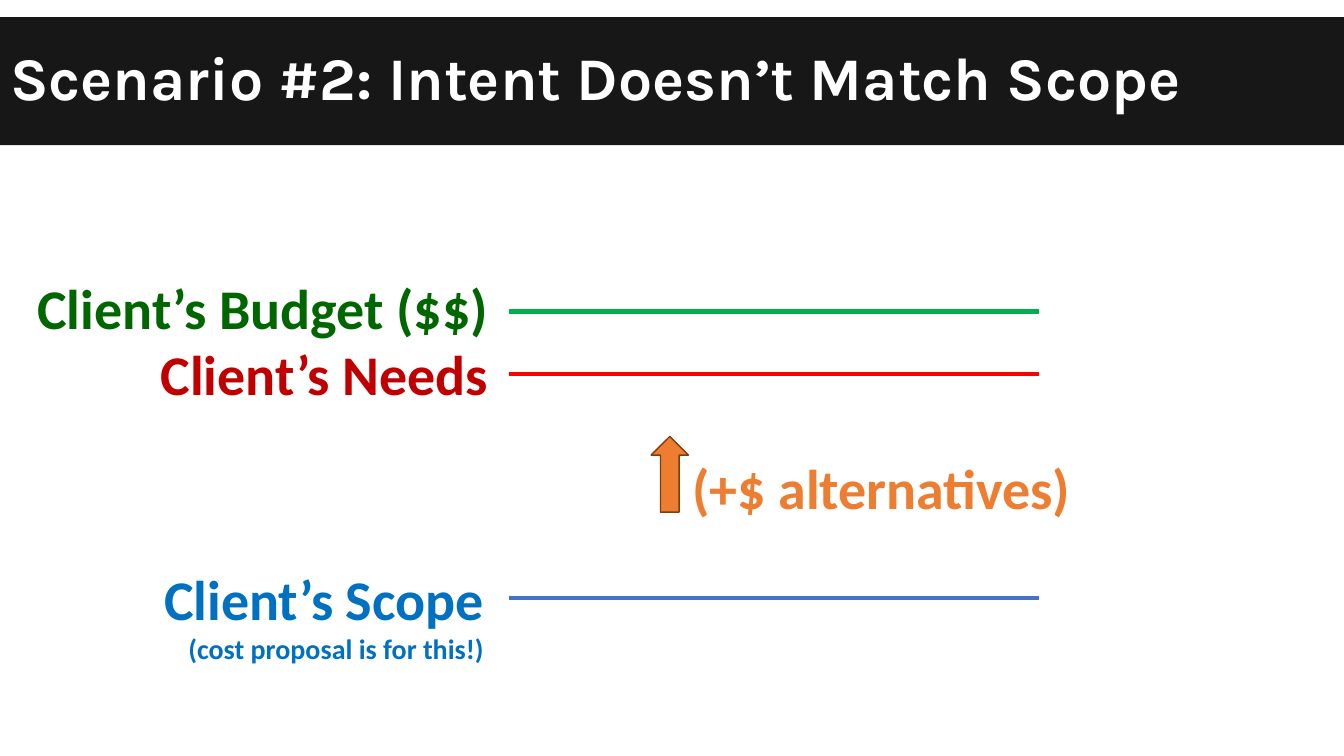
from dataclasses import dataclass

from lxml import etree
from pptx import Presentation
from pptx import util as u
from pptx.dml.color import RGBColor
from pptx.enum import shapes, text
from pptx.oxml import ns
from pptx.shapes.autoshape import Shape

BLACK = RGBColor(0x18, 0x17, 0x17)
WHITE = RGBColor(0xFF, 0xFF, 0xFF)
DARK_GREEN = RGBColor(0x00, 0x66, 0x00)
GREEN = RGBColor(0x00, 0xB0, 0x50)
DARK_RED = RGBColor(0xC0, 0x00, 0x00)
RED = RGBColor(0xFF, 0x00, 0x00)
SKY = RGBColor(0x00, 0x70, 0xC0)
BLUE = RGBColor(0x44, 0x72, 0xC4)
ORANGE = RGBColor(0xED, 0x7D, 0x31)
BROWN = RGBColor(0x84, 0x3C, 0x0B)

WIDTH, HEIGHT = u.Inches(13.33), u.Inches(7.5)
COLUMNS, ROWS = 80, 45
LINE_START, LINE_END = 30.3, 61.86


@dataclass(frozen=True)
class Box:
    col: float
    row: float
    cols: float
    rows: float

    def lengths(self) -> tuple[int, int, int, int]:
        return x(self.col), y(self.row), x(self.cols), y(self.rows)


@dataclass(frozen=True)
class Line:
    text: str
    size: int = 40


@dataclass(frozen=True)
class Level:
    lines: tuple[Line, ...]
    box: Box
    text_color: RGBColor
    line_row: float
    line_color: RGBColor


LEVELS = (
    Level((Line("Client’s Budget ($$)"),), Box(1.32, 15.96, 28.32, 4.62),
          DARK_GREEN, 18.54, GREEN),
    Level((Line("Client’s Needs"),), Box(8.7, 19.92, 20.94, 4.62),
          DARK_RED, 22.26, RED),
    Level((Line("Client’s Scope"), Line("(cost proposal is for this!)", 20)),
          Box(8.94, 33.3, 20.46, 6.66), SKY, 35.58, BLUE),
)


def x(cols: float) -> int:
    return round(WIDTH * cols / COLUMNS)


def y(rows: float) -> int:
    return round(HEIGHT * rows / ROWS)


def style(p, name: str, size: float, color: RGBColor, align) -> None:
    p.alignment = align
    p.font.name = name
    p.font.size = u.Pt(size)
    p.font.bold = True
    p.font.color.rgb = color


def add_label(parent, lines: tuple[Line, ...], box: Box, color: RGBColor,
              align=text.PP_ALIGN.RIGHT) -> Shape:
    sp = parent.add_textbox(*box.lengths())
    tf = sp.text_frame
    tf.word_wrap = False
    tf.auto_size = text.MSO_AUTO_SIZE.SHAPE_TO_FIT_TEXT
    for i, line in enumerate(lines):
        p = tf.add_paragraph() if i else tf.paragraphs[0]
        p.text = line.text
        style(p, "Calibri", line.size, color, align)
    return sp


def add_level(parent, level: Level) -> None:
    add_label(parent, level.lines, level.box, level.text_color)
    row = y(level.line_row)
    line = parent.add_connector(shapes.MSO_CONNECTOR.STRAIGHT,
                                x(LINE_START), row, x(LINE_END), row)
    line.line.color.rgb = level.line_color
    line.line.width = u.Pt(3)
    etree.SubElement(line._element.spPr, ns.qn("a:effectLst"))


def add_alternatives(parent) -> None:
    group = parent.add_group_shape().shapes
    arrow = group.add_shape(shapes.MSO_SHAPE.UP_ARROW,
                            *Box(38.76, 25.98, 2.22, 4.5).lengths())
    arrow.shadow.inherit = False
    arrow.fill.solid()
    arrow.fill.fore_color.rgb = ORANGE
    arrow.line.color.rgb = BROWN
    arrow.line.width = u.Pt(1)
    add_label(group, (Line("(+$ alternatives)"),), Box(40.62, 26.7, 24, 4.62),
              ORANGE, text.PP_ALIGN.LEFT)


def set_title(sp: Shape, title: str) -> None:
    sp.left, sp.top, sp.width, sp.height = Box(0, 1.02, COLUMNS, 7.62).lengths()
    sp.fill.solid()
    sp.fill.fore_color.rgb = BLACK
    tf = sp.text_frame
    tf.text = title
    tf.word_wrap = True
    tf.auto_size = text.MSO_AUTO_SIZE.NONE
    tf.vertical_anchor = text.MSO_ANCHOR.MIDDLE
    p = tf.paragraphs[0]
    p.line_spacing = 0.9
    style(p, "Karla", 43.2, WHITE, text.PP_ALIGN.LEFT)


def main() -> None:
    prs = Presentation()
    prs.slide_width, prs.slide_height = WIDTH, HEIGHT
    slide = prs.slides.add_slide(prs.slide_layouts.get_by_name("Title Only"))
    set_title(slide.shapes.title, "Scenario #2: Intent Doesn’t Match Scope")
    for level in LEVELS:
        add_level(slide.shapes, level)
    add_alternatives(slide.shapes)
    prs.save("out.pptx")


if __name__ == "__main__":
    main()
